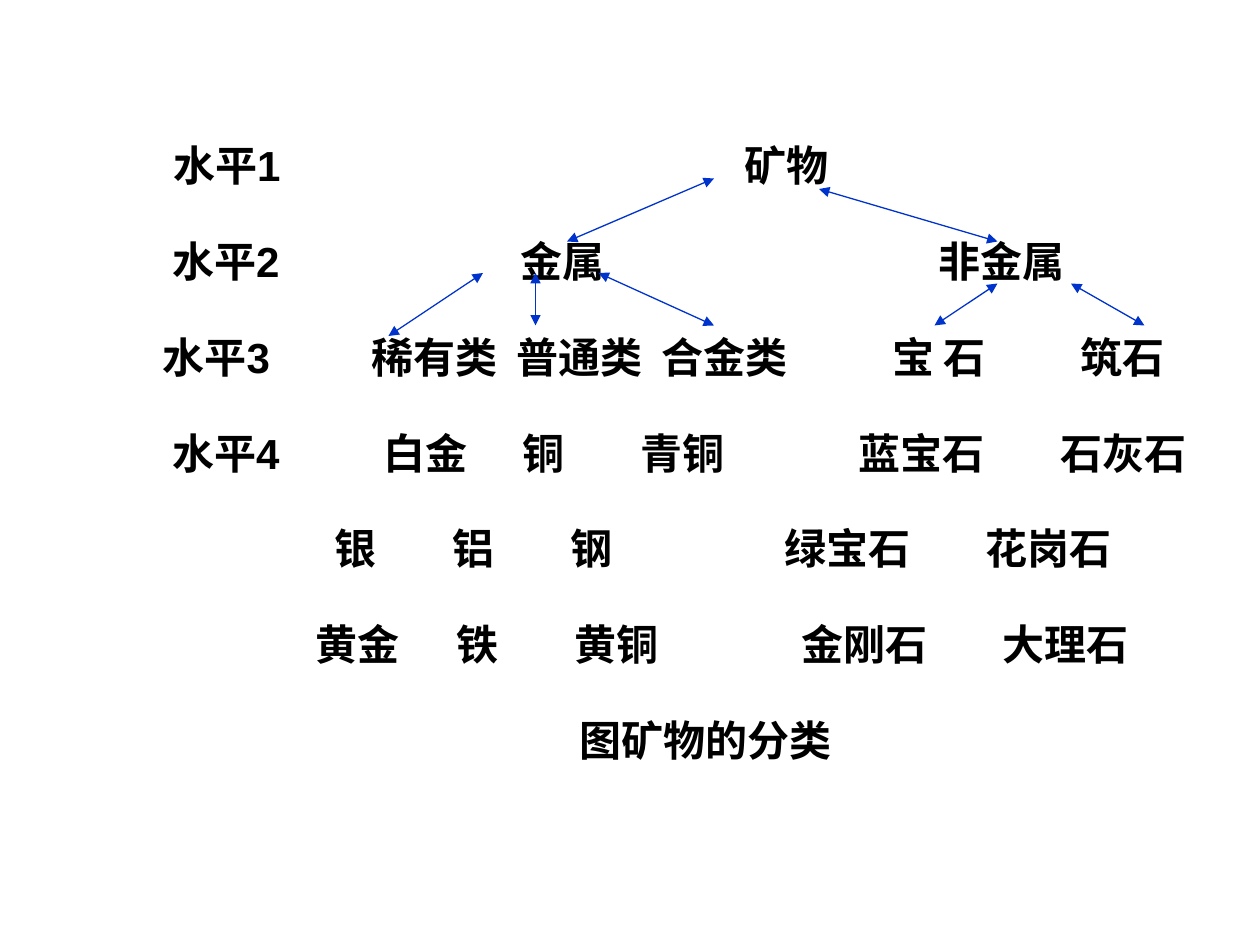
from lxml.etree import SubElement
from pptx import Presentation
from pptx.dml.color import RGBColor
from pptx.enum.shapes import MSO_CONNECTOR as CONNECTOR
from pptx.enum.text import PP_ALIGN as ALIGN
from pptx.oxml.ns import qn
from pptx.util import Inches, Pt

# Grid of 120 columns by 90 rows over the slide
CELL = Inches(1) // 12
COLUMNS, ROWS = 120, 90

# Each level: its words with the column where each one starts
LEVELS = [
    [("水平1", 16.5), ("矿物", 70.9)],
    [("水平2", 16.4), ("金属", 49.6), ("非金属", 89.4)],
    [("水平3", 15.5), ("稀有类", 35.4), ("普通类", 49.2), ("合金类", 63),
     ("宝 石", 85), ("筑石", 102.9)],
    [("水平4", 16.4), ("白金", 36.5), ("铜", 49.8), ("青铜", 61),
     ("蓝宝石", 81.8), ("石灰石", 101)],
    [("银", 31.9), ("铝", 43.1), ("钢", 54.3), ("绿宝石", 74.7), ("花岗石", 93.9)],
    [("黄金", 30.1), ("铁", 43.5), ("黄铜", 54.7), ("金刚石", 76.3), ("大理石", 95.5)],
]
CAPTION, CAPTION_INDENT = "图矿物的分类", 14.3

# Branches as (column, row) to (column, row)
BRANCHES = [
    ((54, 23), (68, 17)), ((78, 18), (95, 23)),
    ((37, 32), (46, 26)), ((68, 31), (57, 26)), ((51, 26), (51, 31)),
    ((102, 27), (109, 31)), ((89, 31), (95, 27)),
]


def grid(count):
    return round(count * CELL)


def color(hex_string):
    return RGBColor.from_string(hex_string)


def write_line(paragraph, text, align):
    paragraph.text = text
    paragraph.alignment = align
    paragraph.line_spacing = 1.9
    for run in paragraph.runs:
        run.font.name, run.font.size, run.font.bold = "Arial", Pt(24), True
        run.font.color.rgb = color("000000")


def set_tabs(paragraph, columns):
    tab_list = SubElement(paragraph._p.get_or_add_pPr(), qn("a:tabLst"))
    for column in columns:
        SubElement(tab_list, qn("a:tab"), pos=str(grid(column)), algn="l")


def add_levels(slide, left, top, width, height):
    """Words of every level on tab stops, with the caption below."""
    box = slide.shapes.add_textbox(*map(grid, (left, top, width, height)))
    frame = box.text_frame
    frame.word_wrap = True
    frame.margin_left = frame.margin_right = 0
    frame.margin_top = grid(2)
    for number, level in enumerate(LEVELS):
        words, starts = zip(*level)
        paragraph = frame.add_paragraph() if number else frame.paragraphs[0]
        write_line(paragraph, "\t" + "\t".join(words), ALIGN.LEFT)
        set_tabs(paragraph, starts)
    caption = frame.add_paragraph()
    write_line(caption, CAPTION, ALIGN.CENTER)
    caption._p.get_or_add_pPr().set("indent", str(grid(CAPTION_INDENT)))


def add_branches(slide, left, top):
    """Double-headed arrows between the levels."""
    for (x1, y1), (x2, y2) in BRANCHES:
        branch = slide.shapes.add_connector(
            CONNECTOR.STRAIGHT, grid(left + x1), grid(top + y1),
            grid(left + x2), grid(top + y2))
        branch.line.color.rgb = color("0033CC")
        branch.line.width = Pt(0.75)
        outline = branch.line._get_or_add_ln()
        for end in ("a:headEnd", "a:tailEnd"):
            SubElement(outline, qn(end), type="triangle")
        SubElement(branch._element.spPr, qn("a:effectLst"))


def main():
    deck = Presentation()
    deck.slide_width, deck.slide_height = grid(COLUMNS), grid(ROWS)
    slide = deck.slides.add_slide(deck.slide_layouts[6])
    add_levels(slide, 0, 7, COLUMNS, 71)
    add_branches(slide, 0, 0)
    deck.save("out.pptx")


if __name__ == "__main__":
    main()
